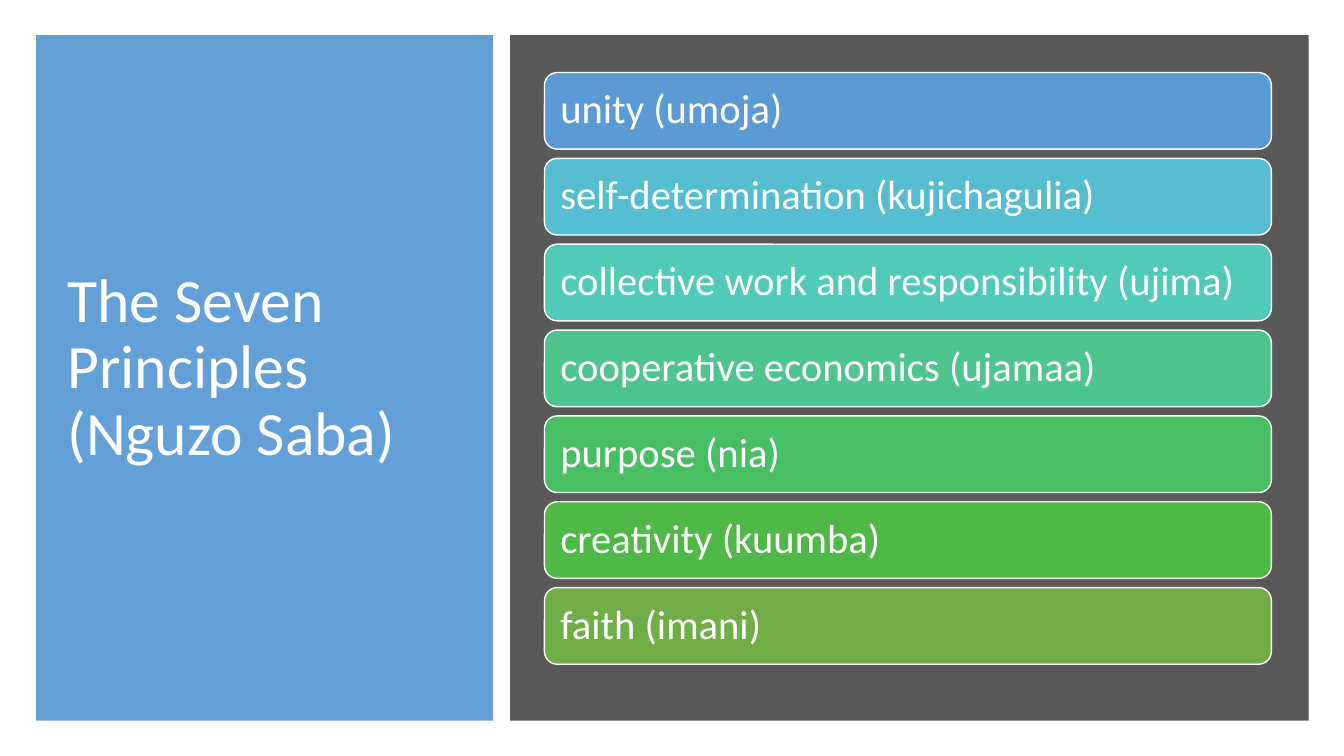
from lxml import etree
from pptx import Presentation
from pptx.dml.color import RGBColor
from pptx.enum.shapes import MSO_SHAPE
from pptx.enum.text import MSO_ANCHOR, MSO_AUTO_SIZE, PP_ALIGN
from pptx.oxml.ns import qn
from pptx.util import Inches, Pt

RECT, ROUNDED = MSO_SHAPE.RECTANGLE, MSO_SHAPE.ROUNDED_RECTANGLE
MIDDLE, LEFT, NO_FIT = MSO_ANCHOR.MIDDLE, PP_ALIGN.LEFT, MSO_AUTO_SIZE.NONE

WHITE = RGBColor(0xFF, 0xFF, 0xFF)
BLUE = RGBColor(0x5B, 0x9B, 0xD5)
GRAY = RGBColor(0x59, 0x59, 0x59)
FONT = "Calibri"

TITLE = "The Seven Principles (Nguzo Saba)"
PRINCIPLES = [
    ("unity (umoja)", BLUE),
    ("self-determination (kujichagulia)", RGBColor(0x56, 0xBC, 0xD0)),
    ("collective work and responsibility (ujima)", RGBColor(0x52, 0xCA, 0xB8)),
    ("cooperative economics (ujamaa)", RGBColor(0x4D, 0xC5, 0x8D)),
    ("purpose (nia)", RGBColor(0x49, 0xBF, 0x64)),
    ("creativity (kuumba)", RGBColor(0x50, 0xB8, 0x46)),
    ("faith (imani)", RGBColor(0x70, 0xAD, 0x47)),
]


def add_block(slide, kind, left, top, width, height, color):
    sp = slide.shapes.add_shape(
        kind, Inches(left), Inches(top), Inches(width), Inches(height))
    sp.shadow.inherit = False
    sp.fill.solid()
    sp.fill.fore_color.rgb = color
    sp.line.fill.background()
    return sp


def write_text(sp, text, size):
    tf = sp.text_frame
    tf.text = text
    tf.word_wrap = True
    tf.auto_size = NO_FIT
    tf.vertical_anchor = MIDDLE
    p = tf.paragraphs[0]
    p.alignment = LEFT
    p.line_spacing = 0.9
    font = p.runs[0].font
    font.name, font.size, font.color.rgb = FONT, Pt(size), WHITE


def add_title_panel(slide, left, top, width, height):
    panel = add_block(slide, RECT, left, top, width, height, BLUE)
    color = panel.fill.fore_color
    fill = panel.element.spPr.find(qn("a:solidFill"))
    etree.SubElement(fill[0], qn("a:alpha"), val="95000")
    color.rgb = BLUE
    title = slide.shapes.title
    title.element.addprevious(panel.element)
    title.left, title.top = Inches(left + 0.21), Inches(top + 0.29)
    title.width, title.height = Inches(width - 0.46), Inches(height - 0.76)
    write_text(title, TITLE, 44)


def add_principles_panel(slide, left, top, width, height):
    add_block(slide, RECT, left, top, width, height, GRAY)
    bar_left, bar_top = left + 0.34, top + 0.37
    bar_width, bar_height = width - 0.71, 0.76
    pitch = (height - 0.93 - bar_height) / (len(PRINCIPLES) - 1)
    for i, (text, color) in enumerate(PRINCIPLES):
        bar = add_block(slide, ROUNDED, bar_left, bar_top + i * pitch,
                        bar_width, bar_height, color)
        bar.line.color.rgb = WHITE
        bar.line.width = Pt(1)
        tf = bar.text_frame
        tf.margin_left = tf.margin_right = Inches(0.12)
        tf.margin_top = tf.margin_bottom = Inches(0.12)
        write_text(bar, text, 29)


def main():
    prs = Presentation()
    prs.slide_width, prs.slide_height = Inches(13.33), Inches(7.5)
    slide = prs.slides.add_slide(prs.slide_layouts[5])
    add_title_panel(slide, 0.36, 0.35, 4.53, 6.8)
    add_principles_panel(slide, 5.06, 0.35, 7.92, 6.8)
    prs.save("out.pptx")


if __name__ == "__main__":
    main()
